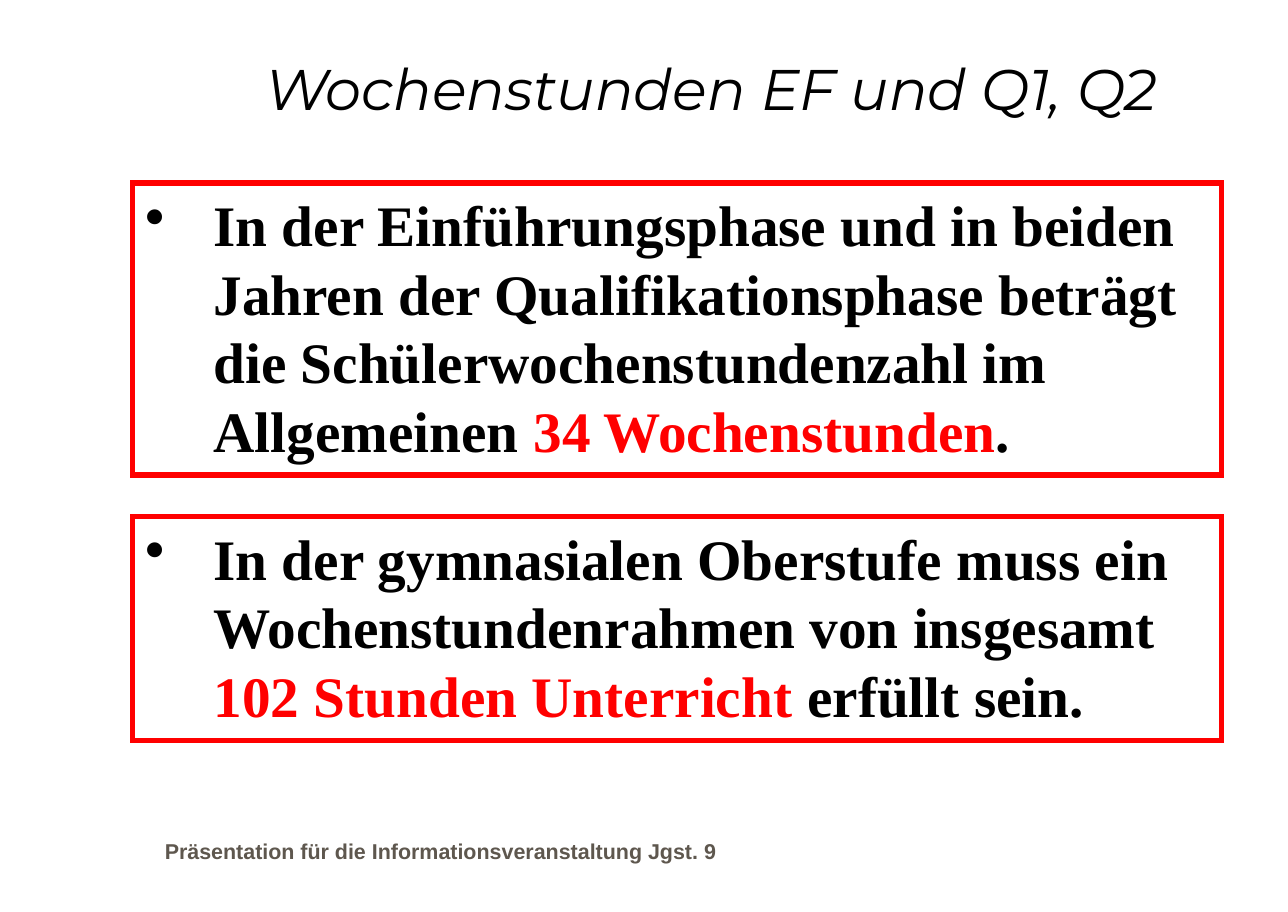
from lxml import etree
from pptx import Presentation
from pptx.dml.color import RGBColor
from pptx.enum.text import MSO_ANCHOR, MSO_AUTO_SIZE, PP_ALIGN
from pptx.oxml.ns import qn
from pptx.util import Pt

BOTTOM, TOP = MSO_ANCHOR.BOTTOM, MSO_ANCHOR.TOP
LEFT, RIGHT = PP_ALIGN.LEFT, PP_ALIGN.RIGHT
NO_AUTOFIT = MSO_AUTO_SIZE.NONE
TWO_CONTENT_LAYOUT = 3

# Content: each rule is a list of (text, colour name)
TITLE = "Wochenstunden EF und Q1, Q2"
RULES = [
    [("In der Einführungsphase und in beiden Jahren der Qualifikationsphase "
      "beträgt die Schülerwochenstundenzahl im Allgemeinen ", "text"),
     ("34 Wochenstunden", "accent"),
     (".", "text")],
    [("In der gymnasialen Oberstufe muss ein Wochenstundenrahmen von insgesamt ", "text"),
     ("102 Stunden Unterricht", "accent"),
     (" erfüllt sein.", "text")],
]
FOOTER = "Präsentation für die Informationsveranstaltung Jgst. 9"

THEME = {
    "text": RGBColor(0x00, 0x00, 0x00),
    "accent": RGBColor(0xFF, 0x00, 0x00),
    "footer": RGBColor(0x5E, 0x57, 0x4E),
    "background": RGBColor(0xFF, 0xFF, 0xFF),
    "title_font": "Montserrat",
    "body_font": "Times New Roman",
    "footer_font": "Arial",
    "large": Pt(32),
    "small": Pt(12),
}

# Layout in points
BOX_LEFT, BOX_TOP, BOX_WIDTH, BOX_GAP = 73.9, 102.2, 609.1, 23.1
BOX_HEIGHTS = [163.4, 125.3]
BOX_INSET = 3.6
INDENT = 38.2


def place(shape, left, top, width, height):
    shape.left, shape.top = Pt(left), Pt(top)
    shape.width, shape.height = Pt(width), Pt(height)


def prepare_frame(shape, anchor):
    frame = shape.text_frame
    frame.word_wrap = True
    frame.auto_size = NO_AUTOFIT
    frame.vertical_anchor = anchor
    return frame


def style(font, name, size, color, bold=False, italic=False):
    font.name, font.size = THEME[name], THEME[size]
    font.color.rgb = THEME[color]
    font.bold, font.italic = bold, italic


def add_bullet(paragraph):
    properties = paragraph._p.get_or_add_pPr()
    properties.set("marL", str(Pt(INDENT)))
    properties.set("indent", str(-Pt(INDENT)))
    etree.SubElement(properties, qn("a:buFontTx"))
    etree.SubElement(properties, qn("a:buChar")).set("char", "•")


def draw_frame_line(shape):
    shape.fill.background()
    shape.line.color.rgb = THEME["accent"]
    shape.line.width = Pt(3)
    line = shape._element.spPr.find(qn("a:ln"))
    etree.SubElement(line, qn("a:miter")).set("lim", "800000")


def fill_rule_box(shape, rule):
    frame = prepare_frame(shape, TOP)
    frame.margin_top = frame.margin_bottom = Pt(BOX_INSET)
    paragraph = frame.paragraphs[0]
    add_bullet(paragraph)
    paragraph.alignment = LEFT
    paragraph.space_before = Pt(0)
    paragraph.line_spacing = 1.0
    for text, color in rule:
        run = paragraph.add_run()
        run.text = text
        style(run.font, "body_font", "large", color, bold=True)


presentation = Presentation()
presentation.slide_width, presentation.slide_height = Pt(720), Pt(509.76)
slide = presentation.slides.add_slide(presentation.slide_layouts[TWO_CONTENT_LAYOUT])
slide.background.fill.solid()
slide.background.fill.fore_color.rgb = THEME["background"]

# Footer line
footer = slide.shapes.add_textbox(Pt(85), Pt(466.8), Pt(486), Pt(19.4))
frame = prepare_frame(footer, BOTTOM)
frame.text = FOOTER
style(frame.paragraphs[0].runs[0].font, "footer_font", "small", "footer", bold=True)

# Title
title, *boxes = slide.placeholders
place(title, 59.8, 19.8, 594.7, 51.8)
frame = prepare_frame(title, BOTTOM)
frame.text = TITLE
frame.paragraphs[0].alignment = RIGHT
style(frame.paragraphs[0].runs[0].font, "title_font", "large", "text", italic=True)

# Framed rules, stacked with a constant gap
top = BOX_TOP
for box, rule, height in zip(boxes, RULES, BOX_HEIGHTS):
    place(box, BOX_LEFT, top, BOX_WIDTH, height)
    draw_frame_line(box)
    fill_rule_box(box, rule)
    top += height + BOX_GAP

presentation.save("out.pptx")
